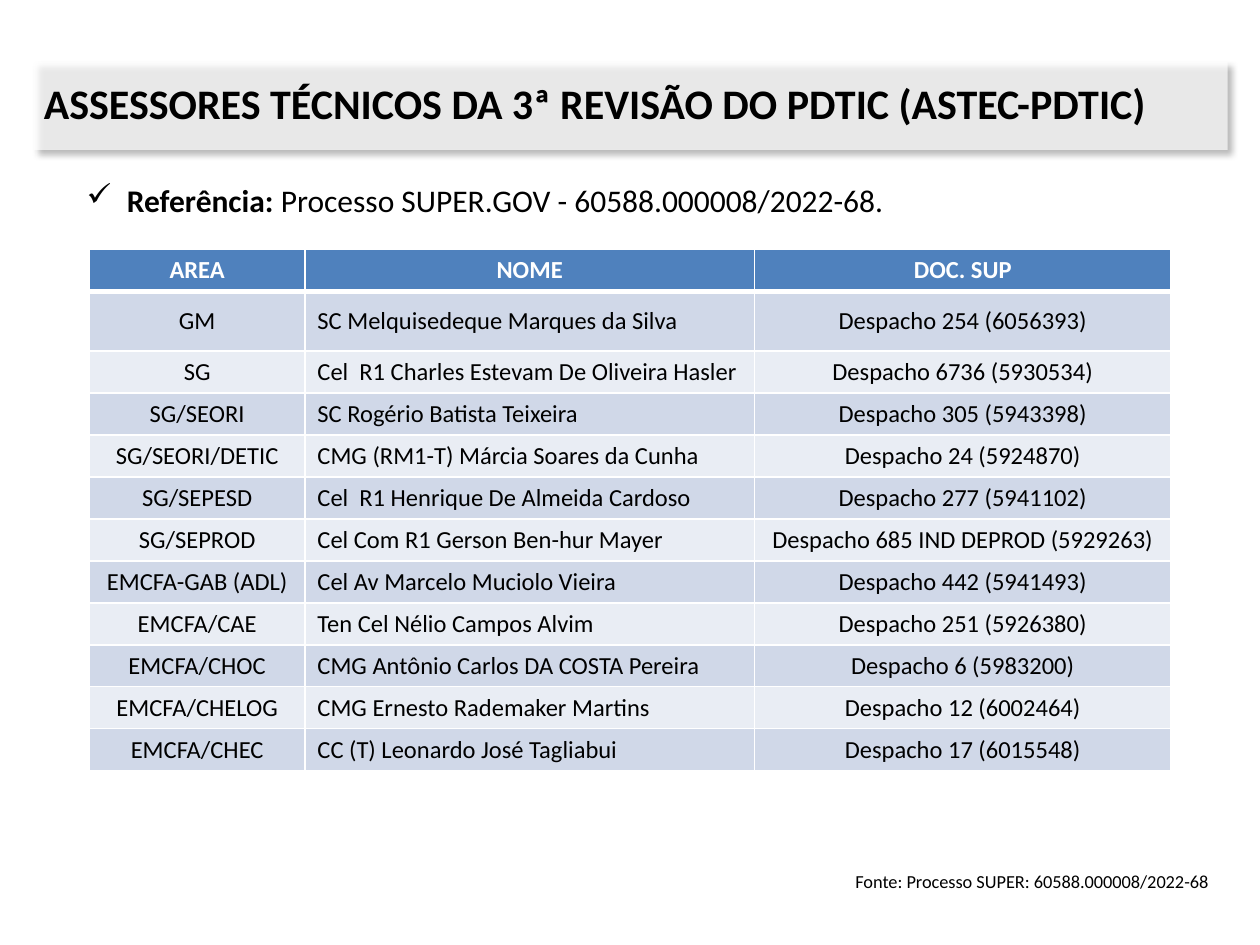
from lxml import etree
from pptx import Presentation
from pptx.dml.color import RGBColor
from pptx.enum.shapes import MSO_SHAPE
from pptx.enum.text import MSO_ANCHOR, PP_ALIGN
from pptx.oxml import parse_xml
from pptx.oxml.ns import nsdecls, qn
from pptx.util import Pt

TITLE = "ASSESSORES TÉCNICOS DA 3ª REVISÃO DO PDTIC (ASTEC-PDTIC)"
REFERENCE = [("Referência: ", True), ("Processo SUPER.GOV - 60588.000008/2022-68.", False)]
SOURCE = "Fonte: Processo SUPER: 60588.000008/2022-68"
HEADER = ("AREA", "NOME", "DOC. SUP")
ADVISERS = [
    ("GM", "SC Melquisedeque Marques da Silva", "Despacho 254 (6056393)"),
    ("SG", "Cel  R1 Charles Estevam De Oliveira Hasler", "Despacho 6736 (5930534)"),
    ("SG/SEORI", "SC Rogério Batista Teixeira", "Despacho 305 (5943398)"),
    ("SG/SEORI/DETIC", "CMG (RM1-T) Márcia Soares da Cunha", "Despacho 24 (5924870)"),
    ("SG/SEPESD", "Cel  R1 Henrique De Almeida Cardoso", "Despacho 277 (5941102)"),
    ("SG/SEPROD", "Cel Com R1 Gerson Ben-hur Mayer", "Despacho 685 IND DEPROD (5929263)"),
    ("EMCFA-GAB (ADL)", "Cel Av Marcelo Muciolo Vieira", "Despacho 442 (5941493)"),
    ("EMCFA/CAE", "Ten Cel Nélio Campos Alvim", "Despacho 251 (5926380)"),
    ("EMCFA/CHOC", "CMG Antônio Carlos DA COSTA Pereira", "Despacho 6 (5983200)"),
    ("EMCFA/CHELOG", "CMG Ernesto Rademaker Martins", "Despacho 12 (6002464)"),
    ("EMCFA/CHEC", "CC (T) Leonardo José Tagliabui", "Despacho 17 (6015548)"),
]

THEME = {
    "font": "Calibri", "text": "000000", "white": "FFFFFF", "header": "4F81BD",
    "bands": ("D0D8E8", "E9EDF4"),
    "title_size": 24, "reference_size": 18, "table_size": 14, "source_size": 10.5,
}
COLUMN_WIDTHS = (123, 257, 238)
COLUMN_ALIGN = (PP_ALIGN.CENTER, PP_ALIGN.LEFT, PP_ALIGN.CENTER)
ROW_HEIGHT, FIRST_ADVISER_HEIGHT = 24, 34


def points(*lengths):
    return [Pt(length) for length in lengths]


def add_run(paragraph, text, size, bold=False, color=THEME["text"]):
    run = paragraph.add_run()
    run.text = text
    run.font.name, run.font.size, run.font.bold = THEME["font"], Pt(size), bold
    run.font.color.rgb = RGBColor.from_string(color)


def add_text(slide, box, runs, size, top_margin=3.6):
    """Add a wrapping text box of (text, bold) runs; return its paragraph."""
    frame = slide.shapes.add_textbox(*points(*box)).text_frame
    frame.word_wrap = True
    frame.margin_top = Pt(top_margin)
    paragraph = frame.paragraphs[0]
    for text, bold in runs:
        add_run(paragraph, text, size, bold)
    return paragraph


def indent(paragraph, left, first=0, bullet=None):
    properties = paragraph._p.get_or_add_pPr()
    properties.set("marL", str(Pt(left)))
    properties.set("indent", str(Pt(first)))
    if bullet:
        etree.SubElement(properties, qn("a:buChar")).set("char", bullet)


def add_banner(slide):
    banner = slide.shapes.add_shape(
        MSO_SHAPE.ROUND_2_DIAG_RECTANGLE, *points(19.5, 35.3, 682, 50.4))
    banner.adjustments[0] = banner.adjustments[1] = 0
    banner.fill.solid()
    banner.fill.fore_color.rgb = RGBColor.from_string(THEME["white"])
    color = banner.fill._xPr.find(".//" + qn("a:srgbClr"))
    etree.SubElement(color, qn("a:alpha")).set("val", "68000")
    banner.line.fill.background()
    banner.shadow.inherit = False
    banner._element.spPr.find(qn("a:effectLst")).append(parse_xml(
        f'<a:outerShdw {nsdecls("a")} blurRad="{Pt(4)}" dist="{Pt(3)}" dir="2700000" '
        f'algn="tl" rotWithShape="0"><a:srgbClr val="{THEME["text"]}">'
        '<a:alpha val="40000"/></a:srgbClr></a:outerShdw>'))


def style_cell(cell, fill, bottom_width):
    for side, width in (("L", 1), ("R", 1), ("T", 1), ("B", bottom_width)):
        cell._tc.get_or_add_tcPr().append(parse_xml(
            f'<a:ln{side} {nsdecls("a")} w="{Pt(width)}"><a:solidFill>'
            f'<a:srgbClr val="{THEME["white"]}"/></a:solidFill></a:ln{side}>'))
    cell.fill.solid()
    cell.fill.fore_color.rgb = RGBColor.from_string(fill)
    cell.vertical_anchor = MSO_ANCHOR.MIDDLE
    cell.margin_top = cell.margin_bottom = Pt(3)


def add_adviser_table(slide):
    rows = [HEADER] + ADVISERS
    heights = [ROW_HEIGHT] * len(rows)
    heights[1] = FIRST_ADVISER_HEIGHT
    table = slide.shapes.add_table(
        len(rows), len(HEADER),
        *points(51.2, 142.6, sum(COLUMN_WIDTHS), sum(heights))).table
    for column, width in zip(table.columns, COLUMN_WIDTHS):
        column.width = Pt(width)
    for r, values in enumerate(rows):
        table.rows[r].height = Pt(heights[r])
        is_header = r == 0
        fill = THEME["header"] if is_header else THEME["bands"][(r - 1) % 2]
        color = THEME["white"] if is_header else THEME["text"]
        for c, value in enumerate(values):
            cell = table.cell(r, c)
            style_cell(cell, fill, 3 if is_header else 1)
            paragraph = cell.text_frame.paragraphs[0]
            paragraph.alignment = PP_ALIGN.CENTER if is_header else COLUMN_ALIGN[c]
            add_run(paragraph, value, THEME["table_size"], is_header, color)


def main():
    deck = Presentation()
    deck.slide_width, deck.slide_height = points(720, 540)
    slide = deck.slides.add_slide(deck.slide_layouts[6])
    add_banner(slide)
    source = add_text(slide, (445.7, 493.9, 255.6, 20.2), [(SOURCE, False)],
                      THEME["source_size"])
    indent(source, 36)
    add_adviser_table(slide)
    reference = add_text(slide, (42.5, 100.1, 624.2, 28.8), REFERENCE,
                         THEME["reference_size"])
    reference.alignment = PP_ALIGN.JUSTIFY
    indent(reference, 22.9, -22.9, "✓")
    add_text(slide, (18, 44, 682.6, 51.8), [(TITLE, True)], THEME["title_size"],
             top_margin=0)
    deck.save("out.pptx")


if __name__ == "__main__":
    main()
